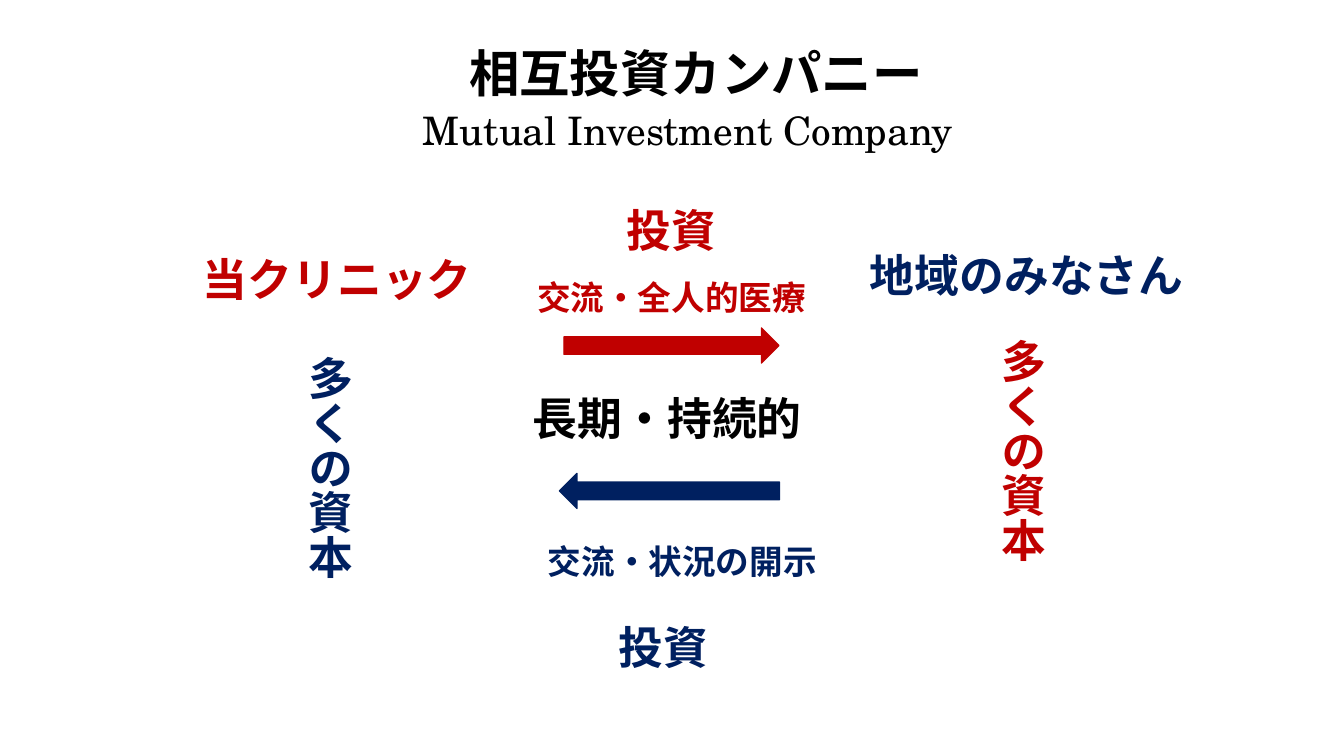
import pptx
import pptx.dml.color
import pptx.enum.shapes
import pptx.enum.text
import pptx.oxml.ns
import pptx.util
from lxml import etree

EMU_PER_PX = 914400 / 100.8
BLACK, RED, NAVY = "000000", "C00000", "002060"
JAPANESE, SERIF = "Noto Sans CJK JP", "TeX Gyre Schola"
ALIGN = pptx.enum.text.PP_ALIGN


def px(length):
    return pptx.util.Emu(round(length * EMU_PER_PX))


def color(hex_string):
    return pptx.dml.color.RGBColor.from_string(hex_string)


def write(para, text, *, size=32, ink=BLACK, font=JAPANESE, bold=True,
          align=ALIGN.LEFT, spacing=1.0):
    para.alignment = align
    para.line_spacing = spacing
    span = para.add_run()
    span.text = text
    span.font.size = pptx.util.Pt(size)
    span.font.bold = bold
    span.font.color.rgb = color(ink)
    span.font.name = font
    east_asian = etree.SubElement(span.font._element, pptx.oxml.ns.qn("a:ea"))
    east_asian.set("typeface", font)


class Diagram:
    def __init__(self, deck):
        self.page = deck.slides.add_slide(deck.slide_layouts[5])

    def fit(self, frame, wrap=True):
        frame.word_wrap = wrap
        frame.auto_size = pptx.enum.text.MSO_AUTO_SIZE.SHAPE_TO_FIT_TEXT
        frame.vertical_anchor = pptx.enum.text.MSO_ANCHOR.TOP

    def title(self, area, text, **style):
        box = self.page.shapes.title
        box.left, box.top, box.width, box.height = map(px, area)
        self.fit(box.text_frame)
        write(box.text_frame.paragraphs[0], text, **style)

    def label(self, area, text, vertical=False, **style):
        frame = self.page.shapes.add_textbox(*map(px, area)).text_frame
        self.fit(frame)
        if vertical:
            frame._txBody.bodyPr.set("vert", "eaVert")
        write(frame.paragraphs[0], text, **style)

    def stack(self, area, lines, ink):
        """Centred, widely spaced lines given as (text, size)."""
        frame = self.page.shapes.add_textbox(*map(px, area)).text_frame
        self.fit(frame, wrap=False)
        for index, (text, size) in enumerate(lines):
            para = frame.add_paragraph() if index else frame.paragraphs[0]
            write(para, text, size=size, ink=ink, align=ALIGN.CENTER, spacing=1.5)

    def arrow(self, area, rotation, ink):
        kind = pptx.enum.shapes.MSO_SHAPE.DOWN_ARROW
        shape = self.page.shapes.add_shape(kind, *map(px, area))
        shape.rotation = rotation
        shape.shadow.inherit = False
        shape.fill.solid()
        shape.fill.fore_color.rgb = color(ink)
        shape.line.color.rgb = color(ink)
        shape.line.width = pptx.util.Pt(1)


def main():
    deck = pptx.Presentation()
    deck.slide_width, deck.slide_height = px(1344), px(756)
    diagram = Diagram(deck)

    # Heading
    diagram.title((459, 37, 521, 72), "相互投資カンパニー", size=36)
    diagram.label((413, 101, 640, 57), "Mutual Investment Company",
                  size=28, font=SERIF, bold=False)

    # The two parties
    diagram.label((193, 247, 291, 65), "当クリニック", ink=RED)
    diagram.label((860, 243, 362, 65), "地域のみなさん", ink=NAVY)

    # Investment from the clinic
    diagram.arrow((654, 238, 35, 215), 270, RED)
    diagram.stack((526, 171, 291, 147),
                  [("投資", 32), ("交流・全人的医療", 24)], RED)

    # Capital held by each party
    for left, top, ink in ((286, 346, NAVY), (979, 329, RED)):
        diagram.label((left, top, 75, 325), "多くの資本", vertical=True, ink=ink)

    # Shared horizon
    diagram.label((523, 386, 347, 65), "長期・持続的")

    # Investment from the community
    diagram.arrow((652, 381, 35, 220), 90, NAVY)
    diagram.label((538, 536, 294, 50), "交流・状況の開示", size=24, ink=NAVY)
    diagram.stack((608, 588, 111, 84), [("投資", 32)], NAVY)

    deck.save("out.pptx")


if __name__ == "__main__":
    main()
